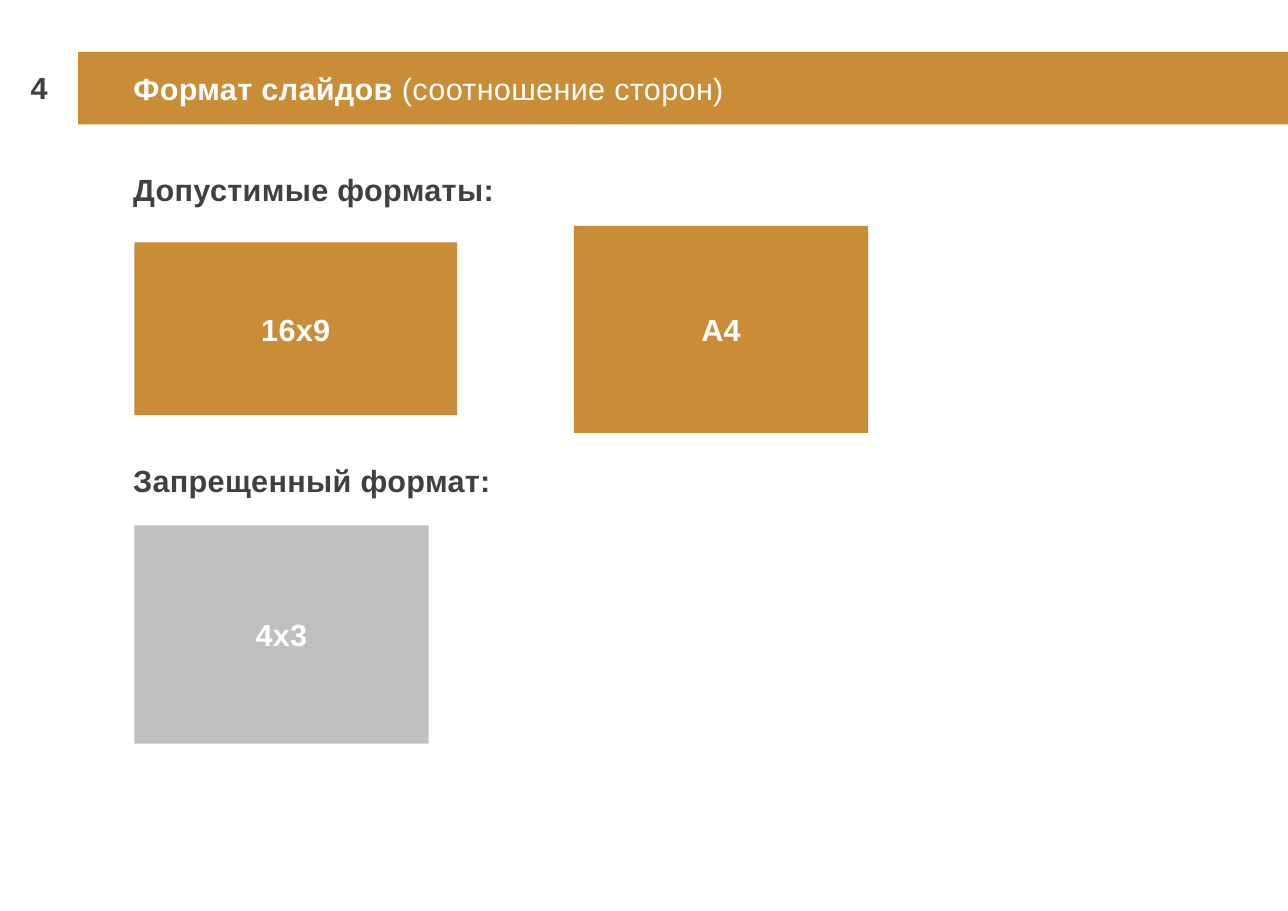
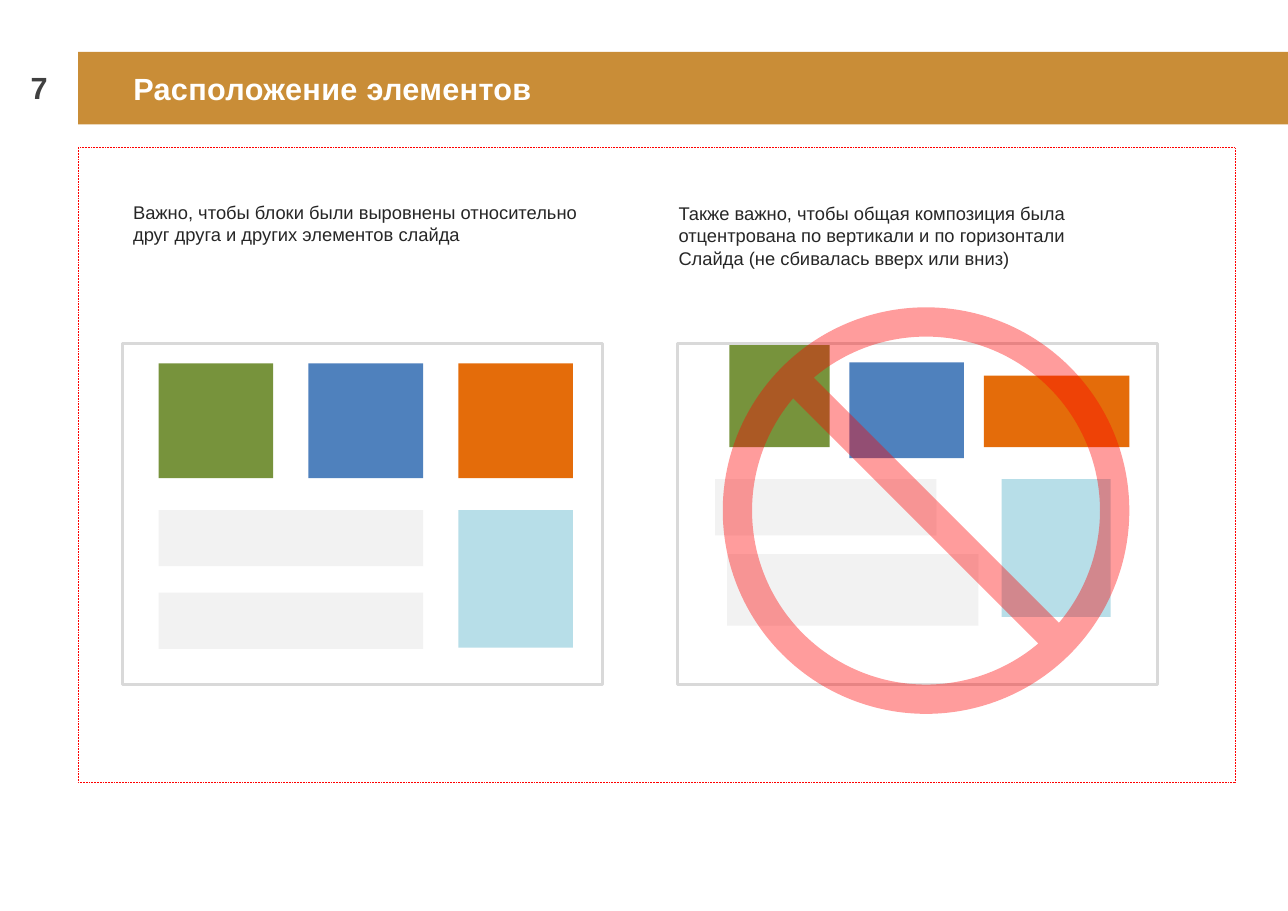
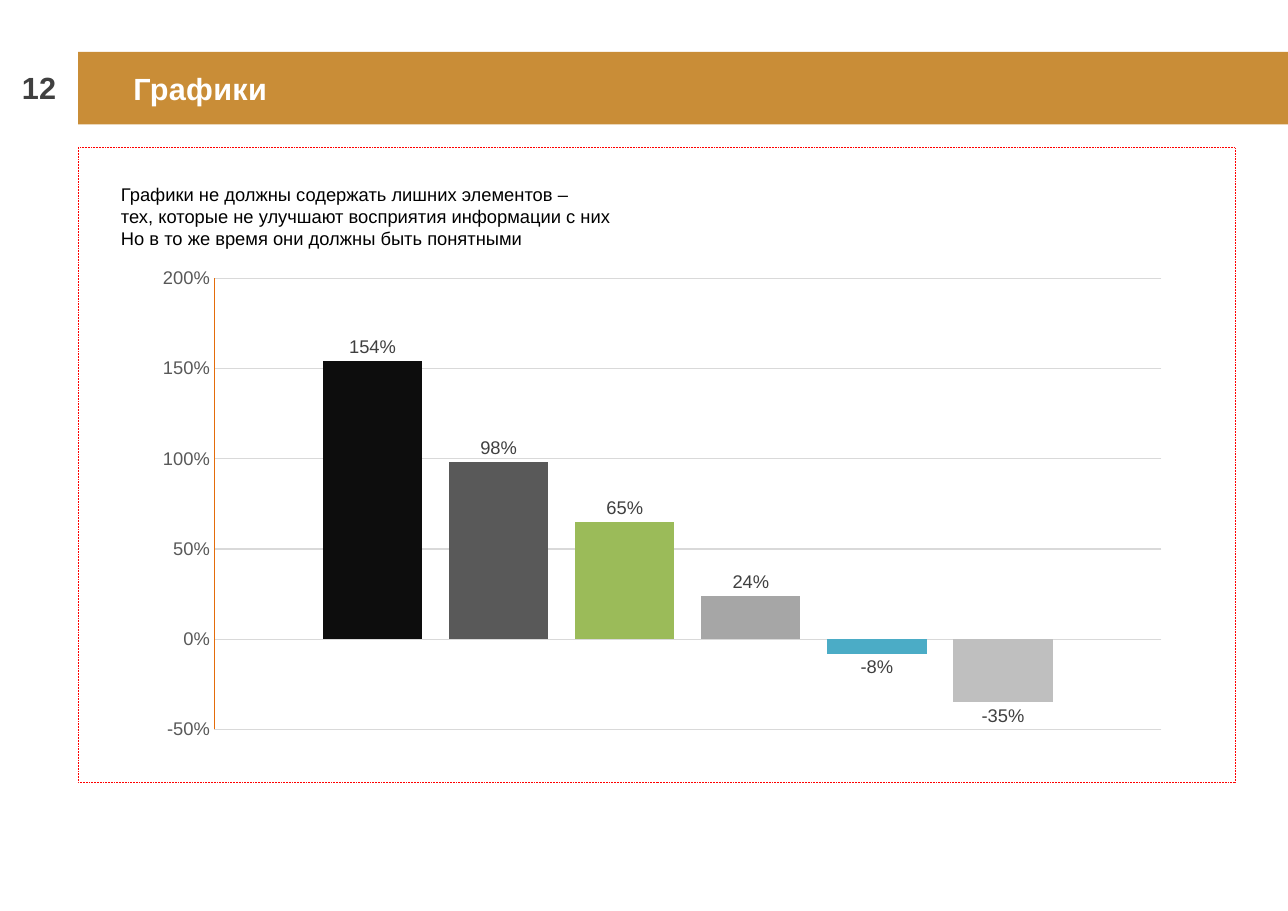
import dataclasses

import pptx
import pptx.chart.data
import pptx.dml.color
import pptx.enum.chart
import pptx.enum.dml
import pptx.enum.shapes
import pptx.enum.text
import pptx.oxml
import pptx.oxml.ns
import pptx.util


@dataclasses.dataclass(frozen=True)
class Theme:
    font: str = "Arial"
    gold: str = "C98D37"
    white: str = "FFFFFF"
    black: str = "000000"
    heading: str = "404040"
    body: str = "262626"
    axis: str = "595959"
    disabled: str = "BFBFBF"
    rule: str = "D9D9D9"
    warning: str = "FF0000"
    green: str = "77933C"
    blue: str = "4F81BD"
    orange: str = "E46C0A"
    aqua: str = "B7DEE8"
    pale: str = "F2F2F2"
    heading_size: int = 20
    body_size: int = 12
    chart_size: int = 10


THEME = Theme()
RGB = pptx.dml.color.RGBColor.from_string
Inches = pptx.util.Inches
Pt = pptx.util.Pt
ALIGN = pptx.enum.text.PP_ALIGN
SHAPE = pptx.enum.shapes.MSO_SHAPE


def write(shape, text, size=THEME.heading_size, color=THEME.heading, bold=True,
          align=ALIGN.LEFT, tracking=20, plain_tail=""):
    """Fill a shape with one paragraph per line; plain_tail follows without bold."""
    frame = shape.text_frame
    frame.word_wrap = True
    for index, line in enumerate(text.split("\n")):
        para = frame.add_paragraph() if index else frame.paragraphs[0]
        para.alignment = align
        for piece, weight in ((line, bold), (plain_tail, False)):
            if not piece:
                continue
            span = para.add_run()
            span.text = piece
            span.font.name = THEME.font
            span.font.size = Pt(size)
            span.font.bold = weight
            span.font.color.rgb = RGB(color)
            span.font._element.set("spc", str(tracking))


def add_box(slide, at, fill=None, line=None, line_width=1, kind=SHAPE.RECTANGLE):
    box = slide.shapes.add_shape(kind, *map(Inches, at))
    box.shadow.inherit = False
    if fill:
        box.fill.solid()
        box.fill.fore_color.rgb = RGB(fill)
    else:
        box.fill.background()
    if line:
        box.line.color.rgb = RGB(line)
        box.line.width = Pt(line_width)
    else:
        box.line.fill.background()
    return box


deck = pptx.Presentation()
deck.slide_width, deck.slide_height = Inches(11.69), Inches(8.27)

# Shared header: page number, title band and dotted content guide
pages = []
for number, title_text, title_tail, has_guide in (
    ("4", "Формат слайдов ", "(соотношение сторон)", False),
    ("7", "Расположение элементов", "", True),
    ("12", "Графики", "", True),
):
    page = deck.slides.add_slide(deck.slide_layouts[5])
    title = page.shapes.title
    title.left, title.top, title.width, title.height = map(Inches, (0.71, 0.47, 10.99, 0.66))
    title.fill.solid()
    title.fill.fore_color.rgb = RGB(THEME.gold)
    title.text_frame.margin_left = Inches(0.5)
    title.text_frame.auto_size = pptx.enum.text.MSO_AUTO_SIZE.NONE
    title.text_frame.vertical_anchor = pptx.enum.text.MSO_ANCHOR.MIDDLE
    write(title, title_text, color=THEME.white, plain_tail=title_tail)
    number_box = page.shapes.add_textbox(*map(Inches, (0, 0.58, 0.71, 0.44)))
    write(number_box, number, align=ALIGN.CENTER)
    if has_guide:
        guide = add_box(page, (0.71, 1.34, 10.5, 5.76), line=THEME.warning, line_width=0.5)
        guide.line.dash_style = pptx.enum.dml.MSO_LINE.ROUND_DOT
    pages.append(page)
formats_page, layout_page, chart_page = pages

# Slide formats
for text, top in (("Допустимые форматы:", 1.5), ("Запрещенный формат:", 4.14)):
    heading = formats_page.shapes.add_textbox(*map(Inches, (1.11, top, 5.18, 0.44)))
    write(heading, text)

for text, at, fill in (
    ("16х9", (1.22, 2.2, 2.93, 1.57), THEME.gold),
    ("А4", (5.21, 2.05, 2.67, 1.88), THEME.gold),
    ("4х3", (1.22, 4.77, 2.67, 1.98), THEME.disabled),
):
    sample = add_box(formats_page, at, fill)
    write(sample, text, color=THEME.white, align=ALIGN.CENTER)

# Body texts
for page, at, color, text in (
    (layout_page, (1.11, 1.78, 4.36, 0.5), THEME.body,
     "Важно, чтобы блоки были выровнены относительно\n"
     "друг друга и других элементов слайда"),
    (layout_page, (6.06, 1.79, 4.45, 0.71), THEME.body,
     "Также важно, чтобы общая композиция была\n"
     "отцентрована по вертикали и по горизонтали\n"
     "Слайда (не сбивалась вверх или вниз)"),
    (chart_page, (1, 1.61, 7.66, 0.71), THEME.black,
     "Графики не должны содержать лишних элементов –\n"
     "тех, которые не улучшают восприятия информации с них\n"
     "Но в то же время они должны быть понятными"),
):
    body = page.shapes.add_textbox(*map(Inches, at))
    write(body, text, size=THEME.body_size, color=color, bold=False, tracking=0)

# Aligned layout: three columns, tiles above bars
tile, pitch, grid_left = 1.04, 1.36, 1.44
for column, fill in enumerate((THEME.green, THEME.blue, THEME.orange)):
    add_box(layout_page, (grid_left + column * pitch, 3.3, tile, tile), fill)
for bar_top in (4.63, 5.38):
    add_box(layout_page, (grid_left, bar_top, pitch + tile, 0.51), THEME.pale)
add_box(layout_page, (grid_left + 2 * pitch, 4.63, tile, 1.25), THEME.aqua)

# Misaligned layout, deliberately off the grid
for at, fill in (
    ((6.62, 3.13, 0.91, 0.93), THEME.green),
    ((7.71, 3.29, 1.04, 0.87), THEME.blue),
    ((9.09, 4.35, 0.99, 1.25), THEME.aqua),
    ((6.49, 4.35, 2.01, 0.51), THEME.pale),
    ((6.6, 5.03, 2.28, 0.65), THEME.pale),
    ((8.93, 3.41, 1.32, 0.65), THEME.orange),
):
    add_box(layout_page, at, fill)
for panel_left in (1.11, 6.15):
    add_box(layout_page, (panel_left, 3.12, 4.36, 3.09), line=THEME.rule, line_width=2)

ban = add_box(layout_page, (6.56, 2.79, 3.69, 3.69), THEME.warning, kind=SHAPE.NO_SYMBOL)
ban.adjustments[0] = 0.072
ban_color = ban._element.spPr.find(".//" + pptx.oxml.ns.qn("a:srgbClr"))
ban_color.append(pptx.oxml.parse_xml(
    f'<a:alpha {pptx.oxml.ns.nsdecls("a")} val="39000"/>'))

# Column chart
columns = (
    (1.54, "0D0D0D"), (0.98, "595959"), (0.65, "9BBB59"),
    (0.24, "A6A6A6"), (-0.08, "4BACC6"), (-0.35, "BFBFBF"),
)
chart_data = pptx.chart.data.CategoryChartData(number_format="0%")
chart_data.categories = ["1"]
for index, (value, _) in enumerate(columns, start=1):
    chart_data.add_series(f"Series {index}", [value])
chart = chart_page.shapes.add_chart(
    pptx.enum.chart.XL_CHART_TYPE.COLUMN_CLUSTERED,
    *map(Inches, (1.29, 2.35, 9.44, 4.45)), chart_data).chart
chart.has_title = False
chart.has_legend = False
chart.font.name = THEME.font
chart.font.size = Pt(THEME.chart_size)
chart.font.color.rgb = RGB(THEME.black)
chart.category_axis.visible = False

axis = chart.value_axis
axis.minimum_scale, axis.maximum_scale, axis.major_unit = -0.5, 2, 0.5
axis.major_tick_mark = pptx.enum.chart.XL_TICK_MARK.NONE
axis.minor_tick_mark = pptx.enum.chart.XL_TICK_MARK.NONE
axis.tick_labels.number_format = "0%"
axis.tick_labels.number_format_is_linked = False
axis.tick_labels.font.name = THEME.font
axis.tick_labels.font.size = Pt(THEME.body_size)
axis.tick_labels.font.color.rgb = RGB(THEME.axis)
for rule, color in ((axis.format.line, THEME.orange),
                    (axis.major_gridlines.format.line, THEME.rule)):
    rule.color.rgb = RGB(color)
    rule.width = Pt(0.75)

plot = chart.plots[0]
plot.gap_width, plot.overlap = 219, -27
plot.vary_by_categories = False
for series, (_, color) in zip(plot.series, columns):
    series.invert_if_negative = False
    series.format.fill.solid()
    series.format.fill.fore_color.rgb = RGB(color)
    labels = series.data_labels
    labels.show_value = True
    labels.position = pptx.enum.chart.XL_LABEL_POSITION.OUTSIDE_END
    labels.number_format = "0%"
    labels.number_format_is_linked = False
    labels.font.name = THEME.font
    labels.font.size = Pt(THEME.body_size)
    labels.font.color.rgb = RGB(THEME.heading)

deck.save("out.pptx")
